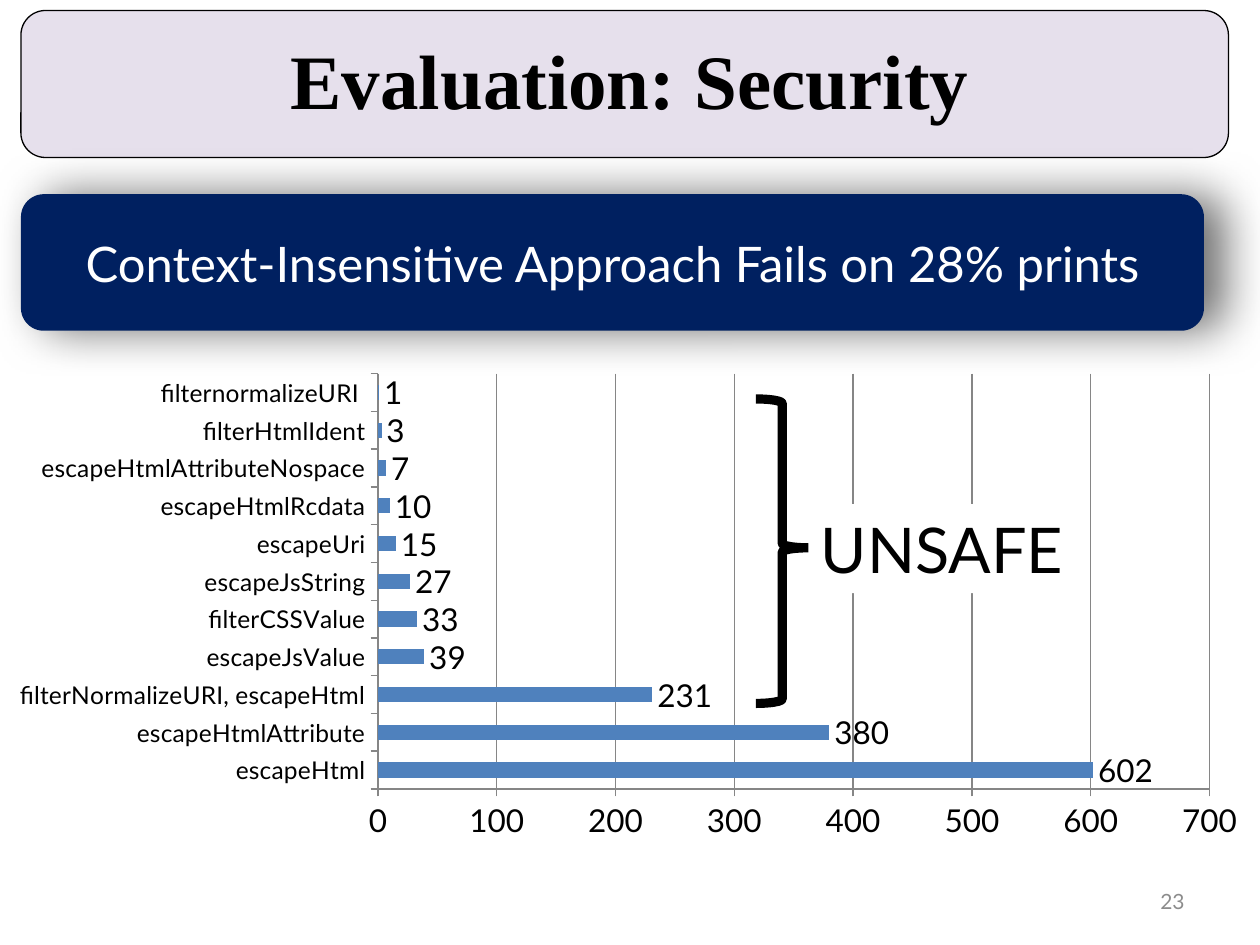
from dataclasses import dataclass

from lxml.etree import SubElement
from pptx import Presentation
from pptx.chart.data import CategoryChartData as ChartData
from pptx.dml.color import RGBColor as Rgb
from pptx.enum.chart import XL_CHART_TYPE as Chart, XL_LABEL_POSITION as Spot
from pptx.enum.chart import XL_TICK_MARK as Tick
from pptx.enum.shapes import MSO_SHAPE as Shape
from pptx.enum.text import MSO_ANCHOR as Anchor, PP_ALIGN as Align
from pptx.oxml import parse_xml
from pptx.oxml.ns import nsdecls, qn
from pptx.util import Pt


@dataclass(frozen=True)
class Theme:
    ink: Rgb = Rgb(0, 0, 0)
    paper: Rgb = Rgb(255, 255, 255)
    lilac: Rgb = Rgb(0xE6, 0xE0, 0xEC)
    navy: Rgb = Rgb(0x00, 0x20, 0x60)
    blue: Rgb = Rgb(0x4F, 0x81, 0xBD)
    gray: Rgb = Rgb(0x8C, 0x8C, 0x8C)
    rule: Rgb = Rgb(0x86, 0x86, 0x86)
    head: str = "Times New Roman"
    body: str = "Lato"
    title: int = 44
    mark: int = 36
    claim: int = 28
    chart: int = 18
    names: int = 14
    small: int = 12


THEME = Theme()

COUNTS = {
    "escapeHtml": 602,
    "escapeHtmlAttribute": 380,
    "filterNormalizeURI, escapeHtml": 231,
    "escapeJsValue": 39,
    "filterCSSValue": 33,
    "escapeJsString": 27,
    "escapeUri": 15,
    "escapeHtmlRcdata": 10,
    "escapeHtmlAttributeNospace": 7,
    "filterHtmlIdent": 3,
    "filternormalizeURI ": 1,
}


def style(font, size, color=THEME.ink, name=THEME.body, bold=False):
    font.size, font.name, font.bold = Pt(size), name, bold
    font.color.rgb = color


def write(shape, text, size, color=THEME.ink, align=Align.CENTER,
          anchor=Anchor.MIDDLE, wrap=True, **look):
    frame = shape.text_frame
    frame.text = text
    frame.word_wrap, frame.vertical_anchor = wrap, anchor
    para = frame.paragraphs[0]
    para.alignment = align
    style(para.runs[0].font, size, color, **look)


def add_panel(slide, kind, box, fill=None):
    shape = slide.shapes.add_shape(kind, *map(Pt, box))
    shape.shadow.inherit = False
    shape.line.fill.background()
    if fill is None:
        shape.fill.background()
    else:
        shape.fill.solid()
        shape.fill.fore_color.rgb = fill
    return shape


def draw_line(shape, width):
    shape.line.color.rgb = THEME.ink
    shape.line.width = Pt(width)


def add_title(slide, box, text):
    x, y, w, h = box
    panel = add_panel(slide, Shape.ROUNDED_RECTANGLE, box, THEME.lilac)
    draw_line(panel, 0.75)
    # Title placeholder in front of its panel
    title = slide.shapes.title
    title.left, title.top = Pt(x + 24), Pt(y - 6)
    title.width, title.height = Pt(w - 42), Pt(h + 6)
    write(title, text, THEME.title, name=THEME.head, bold=True)
    panel._element.addnext(title._element)


def add_claim(slide, box, text):
    panel = add_panel(slide, Shape.ROUNDED_RECTANGLE, box, THEME.navy)
    write(panel, text, THEME.claim, THEME.paper)
    # Soft shadow to the right
    glow = panel._element.spPr.find(qn("a:effectLst"))
    cast = SubElement(glow, qn("a:outerShdw"), blurRad=str(Pt(27)),
                      dist=str(Pt(11)), dir="0", algn="ctr", rotWithShape="0")
    tint = SubElement(cast, qn("a:srgbClr"), val=str(THEME.ink))
    SubElement(tint, qn("a:alpha"), val="56000")


def fix_plot(chart, **area):
    """Set the inner plot area as fractions of the chart."""
    parts = "".join(f'<c:{key} val="{val}"/>' for key, val in area.items())
    layout = parse_xml(
        f'<c:layout {nsdecls("c")}><c:manualLayout><c:layoutTarget val="inner"/>'
        f'<c:xMode val="edge"/><c:yMode val="edge"/>{parts}'
        "</c:manualLayout></c:layout>")
    plot = chart._chartSpace.chart.plotArea
    for old in plot.findall(qn("c:layout")):
        plot.remove(old)
    plot.insert(0, layout)


def add_bars(slide, box):
    data = ChartData()
    data.categories = list(COUNTS)
    data.add_series("Series 1", list(COUNTS.values()))
    chart = slide.shapes.add_chart(
        Chart.BAR_CLUSTERED, *map(Pt, box), data).chart
    chart.has_legend = chart.has_title = False
    style(chart.font, THEME.chart)
    fix_plot(chart, x=0.3, y=0.02, w=0.66, h=0.86)

    # Axes and grid
    names, scale = chart.category_axis, chart.value_axis
    style(names.tick_labels.font, THEME.names)
    scale.minimum_scale, scale.maximum_scale, scale.major_unit = 0, 700, 100
    scale.has_major_gridlines = True
    for axis in (names, scale):
        axis.major_tick_mark = Tick.OUTSIDE
    for part in (names, scale, scale.major_gridlines):
        part.format.line.color.rgb = THEME.rule
        part.format.line.width = Pt(0.75)

    # Bars and values
    plot = chart.plots[0]
    plot.gap_width, plot.vary_by_categories = 150, False
    bars = plot.series[0].format.fill
    bars.solid()
    bars.fore_color.rgb = THEME.blue
    plot.has_data_labels = True
    labels = plot.data_labels
    labels.show_value, labels.position = True, Spot.OUTSIDE_END
    style(labels.font, THEME.chart)


def add_unsafe(slide, box):
    x, y, w, h = box
    brace = add_panel(slide, Shape.RIGHT_BRACE, (x, y, 30, h))
    brace.adjustments[0], brace.adjustments[1] = 0.083, 0.489
    draw_line(brace, 5.25)
    note = add_panel(slide, Shape.RECTANGLE, (x + 30, y + 60, w - 30, 51),
                     THEME.paper)
    write(note, "UNSAFE", THEME.mark, align=Align.LEFT, anchor=Anchor.TOP,
          wrap=False)


def add_number(slide, box, text):
    number = slide.shapes.add_textbox(*map(Pt, box))
    write(number, text, THEME.small, THEME.gray, Align.RIGHT)


def main():
    deck = Presentation()
    deck.slide_width, deck.slide_height = Pt(720), Pt(540)
    slide = deck.slides.add_slide(deck.slide_layouts[5])
    add_title(slide, (12, 6, 690, 84), "Evaluation: Security")
    add_bars(slide, (0, 208, 720, 276))
    add_claim(slide, (12, 111, 676, 78),
              "Context-Insensitive Approach Fails on 28% prints")
    add_number(slide, (516, 500.5, 168, 28.75), "23")
    add_unsafe(slide, (432, 228, 186, 174))
    deck.save("out.pptx")


if __name__ == "__main__":
    main()
